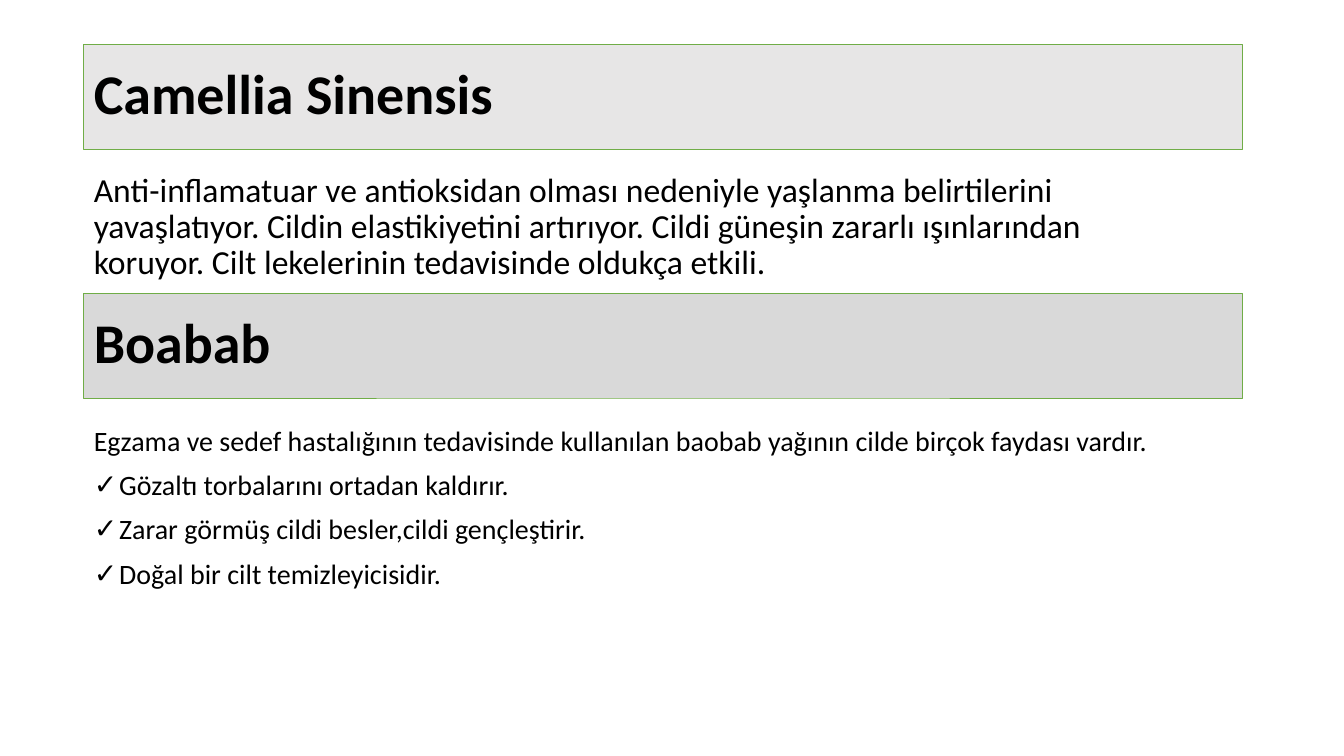
import dataclasses

import pptx
import pptx.dml.color
import pptx.enum.text
import pptx.oxml
import pptx.oxml.ns
import pptx.util
from pptx.util import Cm


@dataclasses.dataclass(frozen=True)
class Theme:
    font: str = "Calibri"
    text: str = "000000"
    border: str = "70AD47"
    light_band: str = "E7E6E6"
    dark_band: str = "D9D9D9"
    paper: str = "FFFFFF"
    heading_size: int = 40
    intro_size: int = 24
    list_size: int = 20


THEME = Theme()
LEFT, WIDTH = Cm(2.11), Cm(29.21)
BAND_HEIGHT = Cm(2.64)
CHECK_INDENT = Cm(0.64)

INTRO = (
    "Anti-inflamatuar ve antioksidan olması nedeniyle yaşlanma belirtilerini "
    "yavaşlatıyor. Cildin elastikiyetini artırıyor. Cildi güneşin zararlı "
    "ışınlarından koruyor. Cilt lekelerinin tedavisinde oldukça etkili."
)
BAOBAB_INTRO = (
    "Egzama ve sedef hastalığının tedavisinde kullanılan baobab yağının "
    "cilde birçok faydası vardır."
)
BENEFITS = [
    "Gözaltı torbalarını ortadan kaldırır.",
    "Zarar görmüş cildi besler,cildi gençleştirir.",
    "Doğal bir cilt temizleyicisidir.",
]


def rgb(value):
    return pptx.dml.color.RGBColor.from_string(value)


def set_all(target, values):
    for name, value in values.items():
        setattr(target, name, value)


def place(sp, top, height, anchor):
    set_all(sp, {"left": LEFT, "top": top, "width": WIDTH, "height": height})
    set_all(sp.text_frame, {
        "word_wrap": True,
        "auto_size": pptx.enum.text.MSO_AUTO_SIZE.NONE,
        "vertical_anchor": anchor,
    })


def fill_shape(sp, color):
    sp.fill.solid()
    sp.fill.fore_color.rgb = rgb(color)


def set_bullet(p, char=None):
    indent = CHECK_INDENT if char else 0
    pPr = p._p.get_or_add_pPr()
    pPr.set("marL", str(indent))
    pPr.set("indent", str(-indent))
    tag = "a:buChar" if char else "a:buNone"
    bullet = pptx.oxml.parse_xml(f"<{tag} {pptx.oxml.ns.nsdecls('a')}/>")
    if char:
        bullet.set("char", char)
    pPr.append(bullet)


def write(p, text, size, before=0, bold=False, bullet=None):
    set_all(p, {
        "alignment": pptx.enum.text.PP_ALIGN.LEFT,
        "line_spacing": 0.9,
        "space_before": pptx.util.Pt(before),
        "space_after": pptx.util.Pt(0),
    })
    set_bullet(p, bullet)
    r = p.add_run()
    r.text = text
    set_all(r.font, {"name": THEME.font, "size": pptx.util.Pt(size), "bold": bold})
    r.font.color.rgb = rgb(THEME.text)


def heading(sp, text, top, color):
    place(sp, top, BAND_HEIGHT, pptx.enum.text.MSO_ANCHOR.MIDDLE)
    fill_shape(sp, color)
    sp.line.color.rgb = rgb(THEME.border)
    sp.line.width = pptx.util.Pt(0.5)
    write(sp.text_frame.paragraphs[0], text, THEME.heading_size, bold=True)


def body(sp, top, height, size, intro, items=()):
    place(sp, top, height, pptx.enum.text.MSO_ANCHOR.TOP)
    fill_shape(sp, THEME.paper)
    tf = sp.text_frame
    write(tf.paragraphs[0], intro, size, before=10)
    for item in items:
        write(tf.add_paragraph(), item, size, before=10, bullet="✓")


def main():
    prs = pptx.Presentation()
    set_all(prs, {"slide_width": Cm(33.87), "slide_height": Cm(19.05)})
    s = prs.slides.add_slide(prs.slide_layouts.get_by_name("Comparison"))
    title, spare, intro, subtitle, benefits = s.placeholders
    spare.element.getparent().remove(spare.element)

    body(intro, Cm(4.24), Cm(3.23), THEME.intro_size, INTRO)
    intro.text_frame.margin_right = Cm(1.9)
    heading(title, "Camellia Sinensis", Cm(1.12), THEME.light_band)
    body(benefits, Cm(10.64), Cm(4.52), THEME.list_size, BAOBAB_INTRO, BENEFITS)
    heading(subtitle, "Boabab", Cm(7.39), THEME.dark_band)
    prs.save("out.pptx")


if __name__ == "__main__":
    main()
